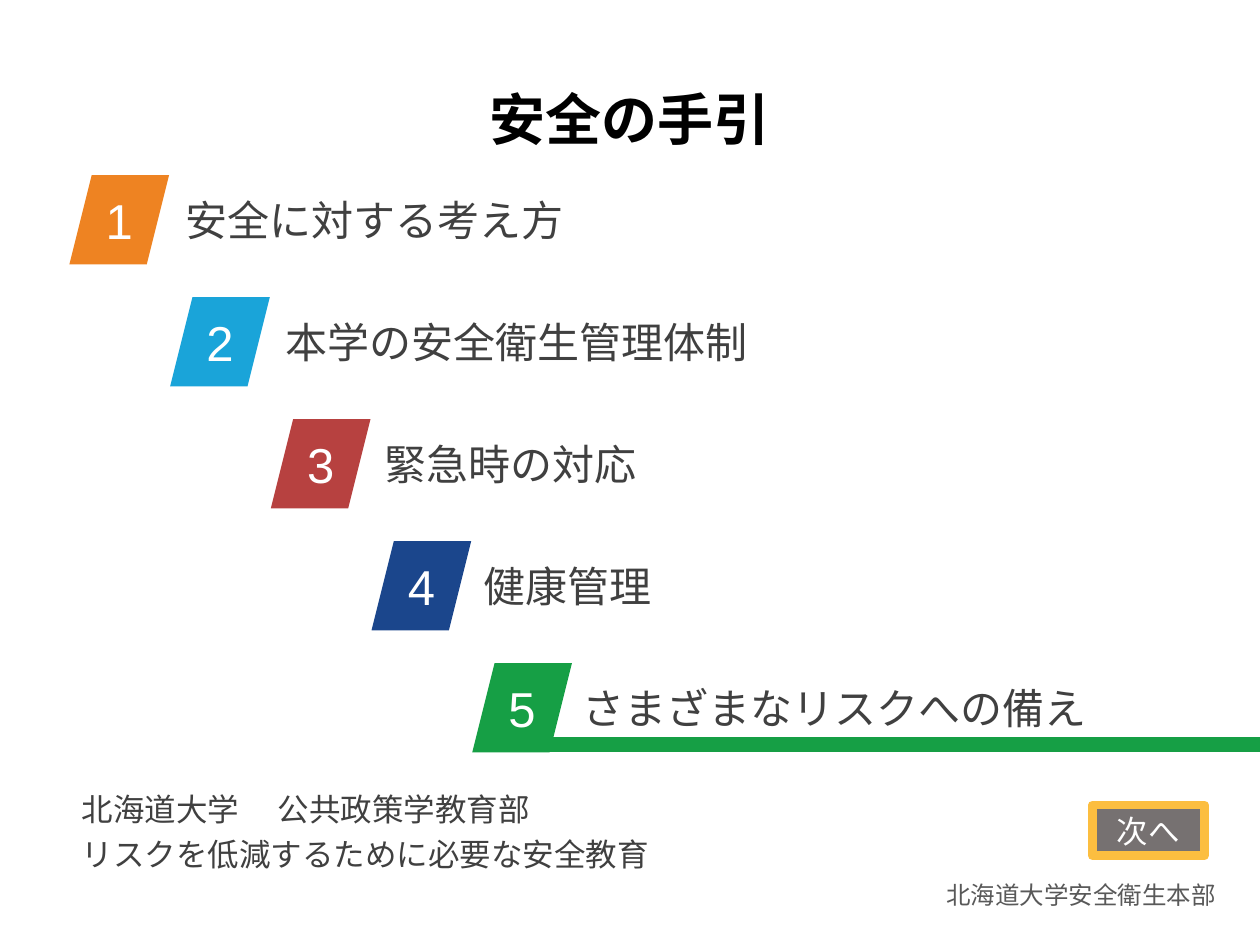
from typing import NamedTuple

from lxml import etree
from pptx import Presentation
from pptx.dml.color import RGBColor
from pptx.enum import shapes, text
from pptx.oxml.ns import qn
from pptx.util import Cm, Pt

FONT = "Arial"
DARK = "404040"
WHITE = "FFFFFF"
GREEN = "169F45"
SLIDE_WIDTH, SLIDE_HEIGHT = 25.4, 19.05


class Box(NamedTuple):
    """Left, top, width and height in centimetres."""
    left: float
    top: float
    width: float
    height: float

    def lengths(self) -> list:
        return [Cm(value) for value in self]


class Chapter(NamedTuple):
    title: str
    color: str
    title_width: float


CHAPTERS = [
    Chapter("安全に対する考え方", "EE8322", 11.07),
    Chapter("本学の安全衛生管理体制", "1AA4D9", 17.55),
    Chapter("緊急時の対応", "B74140", 8.84),
    Chapter("健康管理", "1B468C", 9.5),
    Chapter("さまざまなリスクへの備え", GREEN, 11.15),
]


def rgb(color: str) -> RGBColor:
    return RGBColor.from_string(color)


def write(shape, content: str, *, size: float, color: str = DARK,
          fonts: tuple = (FONT,), bold: bool = False,
          align=text.PP_ALIGN.LEFT, anchor=text.MSO_ANCHOR.MIDDLE,
          spacing: float = 1.0, insets: tuple = (0.25, 0.13)) -> None:
    """Fill a shape with one paragraph per line; the last font repeats."""
    frame = shape.text_frame
    frame.word_wrap = True
    frame.vertical_anchor = anchor
    frame.margin_left = frame.margin_right = Cm(insets[0])
    frame.margin_top = frame.margin_bottom = Cm(insets[1])
    frame.text = content
    for index, paragraph in enumerate(frame.paragraphs):
        paragraph.alignment = align
        paragraph.line_spacing = spacing
        for run in paragraph.runs:
            run.font.name = fonts[min(index, len(fonts) - 1)]
            run.font.size = Pt(size)
            run.font.bold = bold
            run.font.color.rgb = rgb(color)


def add_text(slide, box: Box, content: str, **style) -> None:
    write(slide.shapes.add_textbox(*box.lengths()), content, **style)


def add_filled(slide, kind, box: Box, color: str):
    shape = slide.shapes.add_shape(kind, *box.lengths())
    shape.shadow.inherit = False
    shape.fill.solid()
    shape.fill.fore_color.rgb = rgb(color)
    shape.line.fill.background()
    return shape


def add_chapter(slide, index: int, chapter: Chapter) -> None:
    """Draw one step of the staircase: numbered tile and title."""
    top = 3.53 + 2.46 * index
    tile = Box(1.4 + 2.03 * index, top, 2.01, 1.8)
    add_text(slide, Box(3.5 + 2 * index, top, chapter.title_width, 1.8),
             chapter.title, size=24)
    add_filled(slide, shapes.MSO_SHAPE.PARALLELOGRAM, tile, chapter.color)
    add_text(slide, tile, str(index + 1), size=28, color=WHITE,
             align=text.PP_ALIGN.CENTER)


def main() -> None:
    deck = Presentation()
    deck.slide_width, deck.slide_height = Cm(SLIDE_WIDTH), Cm(SLIDE_HEIGHT)
    slide = deck.slides.add_slide(deck.slide_layouts[6])
    rectangle = shapes.MSO_SHAPE.RECTANGLE

    # Credit on a translucent white strip
    credit = add_filled(slide, rectangle, Box(15.93, 17.7, 8.79, 0.51), WHITE)
    strip_color = credit.fill._xPr.find(qn("a:solidFill"))[0]
    etree.SubElement(strip_color, qn("a:alpha"), val="70000")
    write(credit, "北海道大学安全衛生本部", size=14, color="595959",
          align=text.PP_ALIGN.RIGHT, anchor=text.MSO_ANCHOR.TOP,
          spacing=0.9, insets=(0.2, 0.1))

    # Heading
    add_text(slide, Box(2.54, 1.9, 20.32, 1.12), "安全の手引", size=32,
             color="000000", bold=True, align=text.PP_ALIGN.CENTER,
             spacing=0.9, insets=(0, 0))

    # Staircase of chapters, with a bar under the last one
    bar_left = 10.92
    add_filled(slide, rectangle,
               Box(bar_left, 14.86, SLIDE_WIDTH - bar_left, 0.3), GREEN)
    for index, chapter in enumerate(CHAPTERS):
        add_chapter(slide, index, chapter)

    # Button to the next page
    button = add_filled(slide, rectangle, Box(22.02, 16.23, 2.26, 1.02), "767171")
    button.line.color.rgb = rgb("FCBE40")
    button.line.width = Pt(5)
    write(button, "次へ", size=18, color=WHITE, align=text.PP_ALIGN.CENTER,
          anchor=text.MSO_ANCHOR.TOP)

    # Department and course
    add_text(slide, Box(1.4, 15.75, 14.73, 1.88),
             "北海道大学　 公共政策学教育部\nリスクを低減するために必要な安全教育",
             size=18, fonts=("Noto Sans CJK JP", FONT), spacing=1.2)

    deck.save("out.pptx")


if __name__ == "__main__":
    main()
